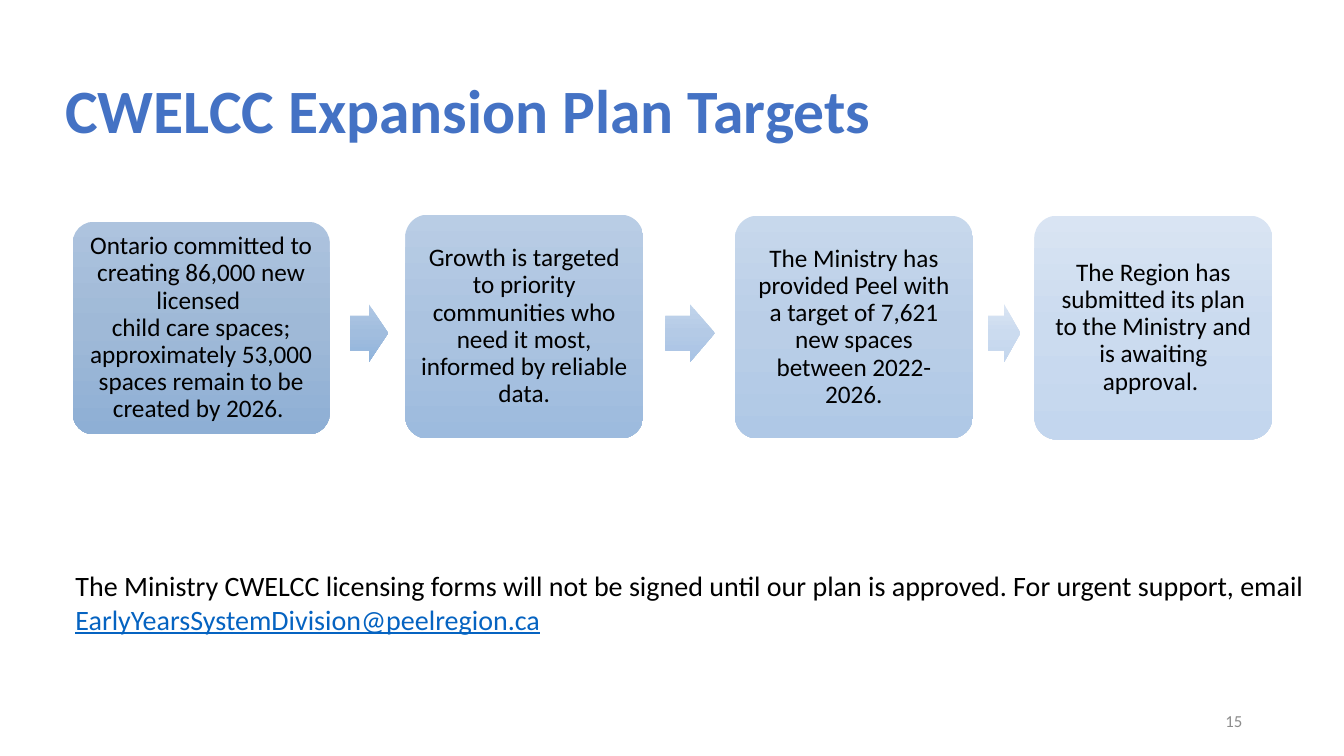
from copy import deepcopy

from pptx import Presentation
from pptx.dml.color import RGBColor
from pptx.enum import shapes, text
from pptx.oxml.ns import qn
from pptx.util import Inches, Pt

COLORS = {"title": "4472C4", "body": "000000", "mail": "0563C1", "page": "8C8C8C"}
SHADES = {
    "steel": ("ADC3DE", "9FB9D7", "8EAFD5"),
    "sky": ("AFC7E4", "A1BDDE", "90B4DC"),
    "blue": ("B9CDE5", "ABC3E0", "9DBBDE"),
    "soft": ("C1D4EB", "B4CAE6", "A7C3E5"),
    "light": ("C7D8EC", "BACEE7", "AFC8E6"),
    "pale": ("D9E4F3", "CBDBEF", "C3D6EE"),
}

# left, top, width, height, shade, paragraphs
STEPS = [
    (0.72, 2.2, 2.55, 2.11, "steel",
     "Ontario committed to creating 86,000 new licensed \n"
     "child care spaces; approximately 53,000 spaces remain to be created by 2026. "),
    (4.02, 2.13, 2.36, 2.22, "blue",
     "Growth is targeted to priority communities who need it most, "
     "informed by reliable data."),
    (7.29, 2.14, 2.36, 2.21, "light",
     "The Ministry has provided Peel with a target of 7,621 new spaces "
     "between 2022-2026."),
    (10.26, 2.14, 2.36, 2.22, "pale",
     "The Region has submitted its plan to the Ministry and is awaiting approval. "),
]
# left, width, shade
ARROWS = [(3.47, 0.38, "sky"), (6.6, 0.49, "soft"), (9.8, 0.32, "pale")]


def style(run, size, color, bold=False):
    font = run.font
    font.name, font.size, font.bold = "Calibri", Pt(size), bold
    font.color.rgb = RGBColor.from_string(COLORS[color])


def shade(shape, name):
    """Fill with a three-stop gradient from top to bottom, without a line."""
    shape.shadow.inherit = False
    shape.line.fill.background()
    shape.fill.gradient()
    shape.fill.gradient_angle = 270
    stops = shape._element.spPr.find(qn("a:gradFill")).find(qn("a:gsLst"))
    stops.insert(1, deepcopy(stops[0]))
    for stop, pos, color in zip(shape.fill.gradient_stops, (0, 0.5, 1), SHADES[name]):
        stop.color.rgb = RGBColor.from_string(color)
        stop.position = pos


def label(slide, box, words, size, color, bold=False, anchor=text.MSO_ANCHOR.MIDDLE):
    frame = slide.shapes.add_textbox(*map(Inches, box)).text_frame
    frame.word_wrap = True
    frame.vertical_anchor = anchor
    para = frame.paragraphs[0]
    para.text = words
    style(para.runs[0], size, color, bold)
    return para


def step(slide, left, top, width, height, name, words):
    card = slide.shapes.add_shape(
        shapes.MSO_SHAPE.ROUNDED_RECTANGLE, *map(Inches, (left, top, width, height)))
    card.adjustments[0] = 0.1
    shade(card, name)
    frame = card.text_frame
    frame.word_wrap = True
    frame.vertical_anchor = text.MSO_ANCHOR.MIDDLE
    frame.margin_left = frame.margin_right = Inches(0.08)
    frame.margin_top = frame.margin_bottom = Inches(0.08)
    frame.text = words
    for para in frame.paragraphs:
        para.alignment = text.PP_ALIGN.CENTER
        para.line_spacing = 0.9
        style(para.runs[0], 18, "body")


def arrow(slide, left, width, name):
    head = slide.shapes.add_shape(
        shapes.MSO_SHAPE.RIGHT_ARROW, *map(Inches, (left, 3.02, width, 0.57)))
    head.adjustments[0] = 0.6
    head.adjustments[1] = 0.5
    shade(head, name)


def note(slide, box):
    para = label(
        slide, box,
        "The Ministry CWELCC licensing forms will not be signed until our plan "
        "is approved. For urgent support, email ",
        20, "body", anchor=text.MSO_ANCHOR.TOP)
    mail = para.add_run()
    mail.text = "EarlyYearsSystemDivision@peelregion.ca"
    style(mail, 20, "mail")
    mail.font.underline = True


def main():
    deck = Presentation()
    deck.slide_width, deck.slide_height = Inches(13.33), Inches(7.5)
    slide = deck.slides.add_slide(deck.slide_layouts[6])
    title = label(slide, (0.55, 0.4, 11.87, 1.45),
                  "CWELCC Expansion Plan Targets", 44, "title", bold=True)
    title.line_spacing = 0.9
    for item in STEPS:
        step(slide, *item)
    for item in ARROWS:
        arrow(slide, *item)
    note(slide, (0.65, 5.59, 12.5, 0.77))
    page = label(slide, (9.42, 6.95, 3, 0.4), "15", 12, "page")
    page.alignment = text.PP_ALIGN.RIGHT
    deck.save("out.pptx")


if __name__ == "__main__":
    main()
